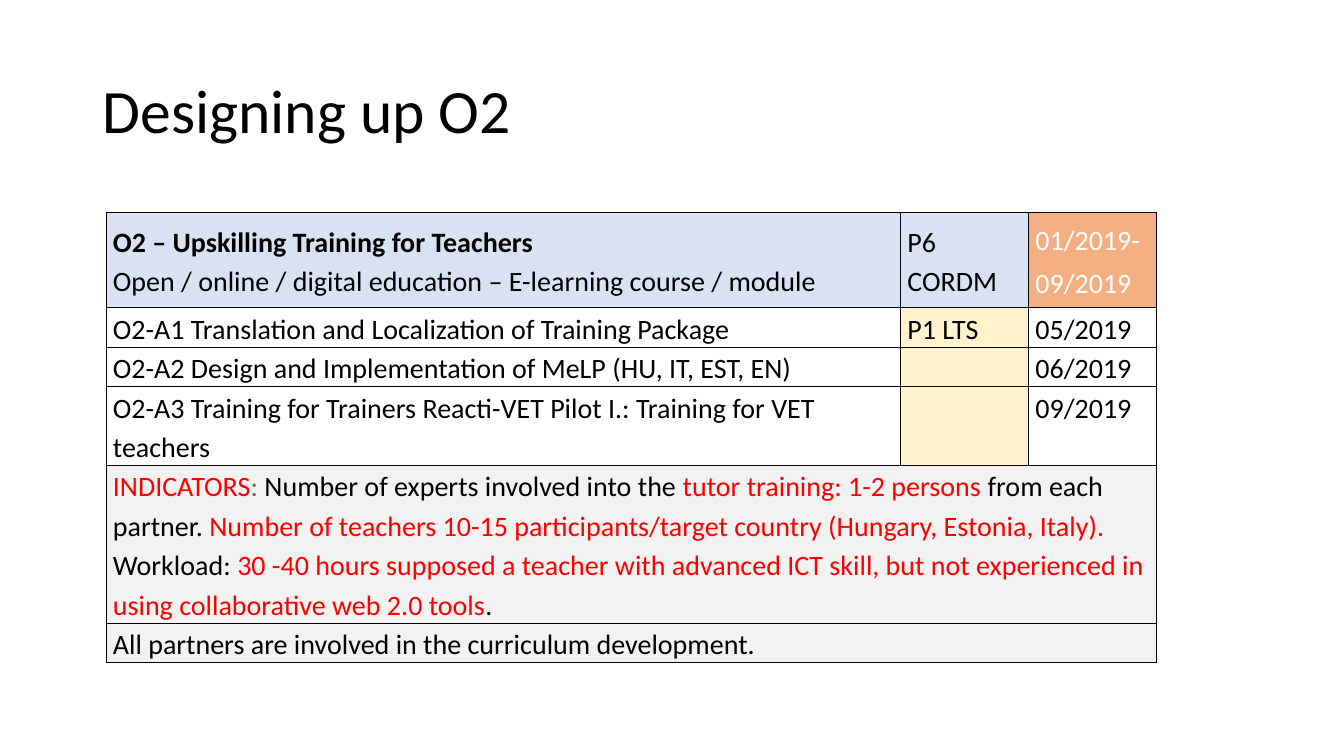
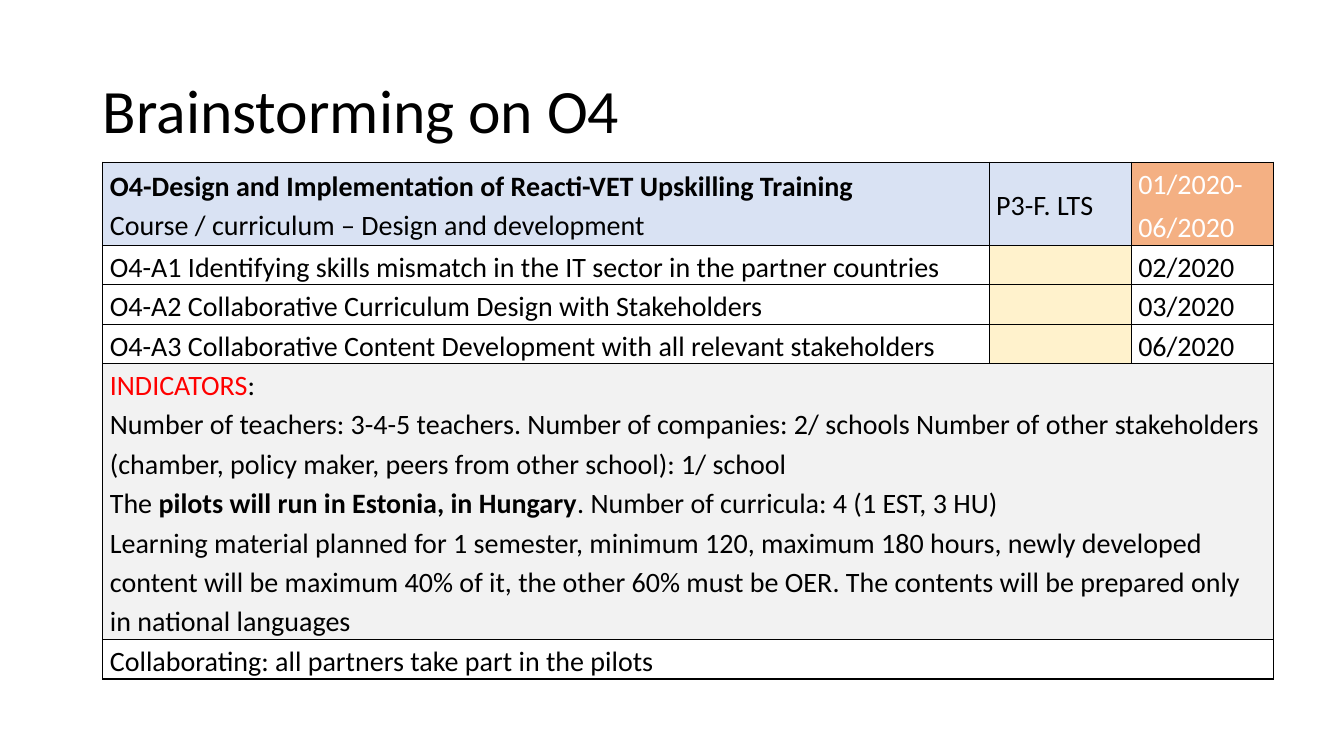
from dataclasses import dataclass

from lxml import etree
from pptx import Presentation
from pptx.dml.color import RGBColor
from pptx.enum import text
from pptx.oxml import ns
from pptx.util import Inches, Pt


@dataclass(frozen=True)
class Theme:
    font: str = "Calibri"
    title_size: int = 44
    body_size: int = 20
    black: str = "000000"
    white: str = "FFFFFF"
    red: str = "FF0000"
    green: str = "538135"
    blue_fill: str = "D9E2F3"
    orange_fill: str = "F4B083"
    yellow_fill: str = "FFF2CC"
    gray_fill: str = "F2F2F2"
    inner_border: float = 0.5
    line_height: float = 0.39


THEME = Theme()
TITLE_BOX = (0.92, 0.4, 11.5, 1.45)
HEADER_FILLS = (THEME.blue_fill, THEME.blue_fill, THEME.orange_fill)
ACTIVITY_FILLS = (THEME.white, THEME.yellow_fill, THEME.white)


def style_font(font, size, color, bold=False):
    font.name = THEME.font
    font.size = Pt(size)
    font.bold = bold
    font.color.rgb = RGBColor.from_string(color)


def add_title(slide, title_text):
    title = slide.shapes.title
    title.left, title.top, title.width, title.height = map(Inches, TITLE_BOX)
    frame = title.text_frame
    frame.text = title_text
    frame.vertical_anchor = text.MSO_ANCHOR.MIDDLE
    frame.auto_size = text.MSO_AUTO_SIZE.NONE
    paragraph = frame.paragraphs[0]
    paragraph.alignment = text.PP_ALIGN.LEFT
    paragraph.line_spacing = 0.9
    style_font(paragraph.runs[0].font, THEME.title_size, THEME.black)


def set_borders(cell, widths):
    properties = cell._tc.get_or_add_tcPr()
    for index, (side, width) in enumerate(zip("LRTB", widths)):
        line = etree.Element(ns.qn(f"a:ln{side}"), w=str(Pt(width)))
        fill = etree.SubElement(line, ns.qn("a:solidFill"))
        etree.SubElement(fill, ns.qn("a:srgbClr"), val=THEME.black)
        properties.insert(index, line)


def write_cell(cell, paragraphs, fill, color, space_after, anchor):
    cell.margin_left = cell.margin_right = Inches(0.07)
    cell.margin_top = cell.margin_bottom = 0
    cell.vertical_anchor = anchor
    cell.fill.solid()
    cell.fill.fore_color.rgb = RGBColor.from_string(fill)
    frame = cell.text_frame
    for index, runs in enumerate(paragraphs):
        paragraph = frame.add_paragraph() if index else frame.paragraphs[0]
        paragraph.line_spacing = 1.15
        paragraph.space_after = Pt(space_after)
        for content, *style in runs:
            run = paragraph.add_run()
            run.text = content
            bold = "bold" in style
            colors = [name for name in style if name != "bold"]
            style_font(run.font, THEME.body_size, colors[0] if colors else color, bold)


def add_plan_table(slide, left, top, columns, heights, header, activities, notes, outer):
    rows = [header, *activities, *notes]
    table = slide.shapes.add_table(
        len(rows), len(columns), Inches(left), Inches(top),
        Inches(sum(columns)), Inches(sum(heights)),
    ).table
    table.first_row = table.horz_banding = False
    for column, width in zip(table.columns, columns):
        column.width = Inches(width)
    for row, height in zip(table.rows, heights):
        row.height = Inches(height)

    last_row, last_column = len(rows) - 1, len(columns) - 1
    for row_index, row in enumerate(rows):
        is_note = row_index > len(activities)
        if is_note:
            paragraphs, note_fill = row
            table.cell(row_index, 0).merge(table.cell(row_index, last_column))
            row, fills = [paragraphs], [note_fill]
        else:
            fills = ACTIVITY_FILLS if row_index else HEADER_FILLS
        anchor = text.MSO_ANCHOR.TOP if row_index else text.MSO_ANCHOR.MIDDLE
        for column_index, (paragraphs, fill) in enumerate(zip(row, fills)):
            color = THEME.white if fill == THEME.orange_fill else THEME.black
            write_cell(table.cell(row_index, column_index), paragraphs, fill, color,
                       3 if column_index else 0, anchor)
        for column_index in range(len(columns)):
            edges = (
                column_index == 0,
                column_index == last_column or is_note,
                row_index == 0,
                row_index == last_row,
            )
            set_borders(table.cell(row_index, column_index),
                        [outer if edge else THEME.inner_border for edge in edges])


def plain(*lines):
    return [[(line,)] for line in lines]


def activity(name, partner, date):
    return [plain(name), plain(partner) if partner else [], plain(date)]


def header_row(name, kind, partner, start, end):
    return [[[(name, "bold")], [(kind,)]], plain(partner), plain(start, end)]


def build_training_slide(slide):
    add_title(slide, "Designing up O2")
    line = THEME.line_height
    indicators = [[
        ("INDICATORS", THEME.red),
        (": ", THEME.green),
        ("Number of experts involved into the ",),
        ("tutor training: 1-2 persons ", THEME.red),
        ("from each partner. ",),
        ("Number of teachers 10-15 participants/target country "
         "(Hungary, Estonia, Italy). ", THEME.red),
        ("Workload: ",),
        ("30 -40 hours supposed a teacher with advanced ICT skill, but not "
         "experienced in using collaborative web 2.0 tools", THEME.red),
        (".",),
    ]]
    add_plan_table(
        slide, 1.05, 2.11, (7.88, 1.27, 1.27),
        (0.94, line, line, 2 * line, 4 * line, line),
        header_row("O2 – Upskilling Training for Teachers",
                   "Open / online / digital education – E-learning course / module",
                   "P6 CORDM", "01/2019-", "09/2019"),
        [
            activity("O2-A1 Translation and Localization of Training Package",
                     "P1 LTS", "05/2019"),
            activity("O2-A2 Design and Implementation of MeLP (HU, IT, EST, EN)",
                     "", "06/2019"),
            activity("O2-A3 Training for Trainers Reacti-VET Pilot I.: "
                     "Training for VET teachers", "", "09/2019"),
        ],
        [
            (indicators, THEME.gray_fill),
            (plain("All partners are involved in the curriculum development."),
             THEME.gray_fill),
        ],
        THEME.inner_border,
    )


def build_curriculum_slide(slide):
    add_title(slide, "Brainstorming on O4")
    line = THEME.line_height
    indicators = [
        [("INDICATORS", THEME.red), (":",)],
        [("Number of teachers: 3-4-5 teachers. Number of companies: 2/ schools "
          "Number of other stakeholders (chamber, policy maker, peers from other "
          "school): 1/ school",)],
        [("The ",), ("pilots will run in Estonia, in Hungary", "bold"),
         (". Number of curricula: 4 (1 EST, 3 HU)",)],
        [("Learning material planned for 1 semester, minimum 120, maximum 180 hours, "
          "newly developed content will be maximum 40% of it, the other 60% must be "
          "OER. The contents will be prepared only in national languages",)],
    ]
    add_plan_table(
        slide, 1.02, 1.61, (8.79, 1.41, 1.41),
        (0.82, line, line, line, 7 * line, line),
        header_row("O4-Design and Implementation of Reacti-VET Upskilling Training",
                   "Course / curriculum – Design and development",
                   "P3-F. LTS", "01/2020-", "06/2020"),
        [
            activity("O4-A1 Identifying skills mismatch in the IT sector in the "
                     "partner countries", "", "02/2020"),
            activity("O4-A2 Collaborative Curriculum Design with Stakeholders",
                     "", "03/2020"),
            activity("O4-A3 Collaborative Content Development with all relevant "
                     "stakeholders", "", "06/2020"),
        ],
        [
            (indicators, THEME.gray_fill),
            (plain("Collaborating: all partners take part in the pilots"), THEME.white),
        ],
        1,
    )


def main():
    presentation = Presentation()
    presentation.slide_width = Inches(13.33)
    presentation.slide_height = Inches(7.5)
    title_only = presentation.slide_layouts[5]
    for build in (build_training_slide, build_curriculum_slide):
        build(presentation.slides.add_slide(title_only))
    presentation.save("out.pptx")


if __name__ == "__main__":
    main()
